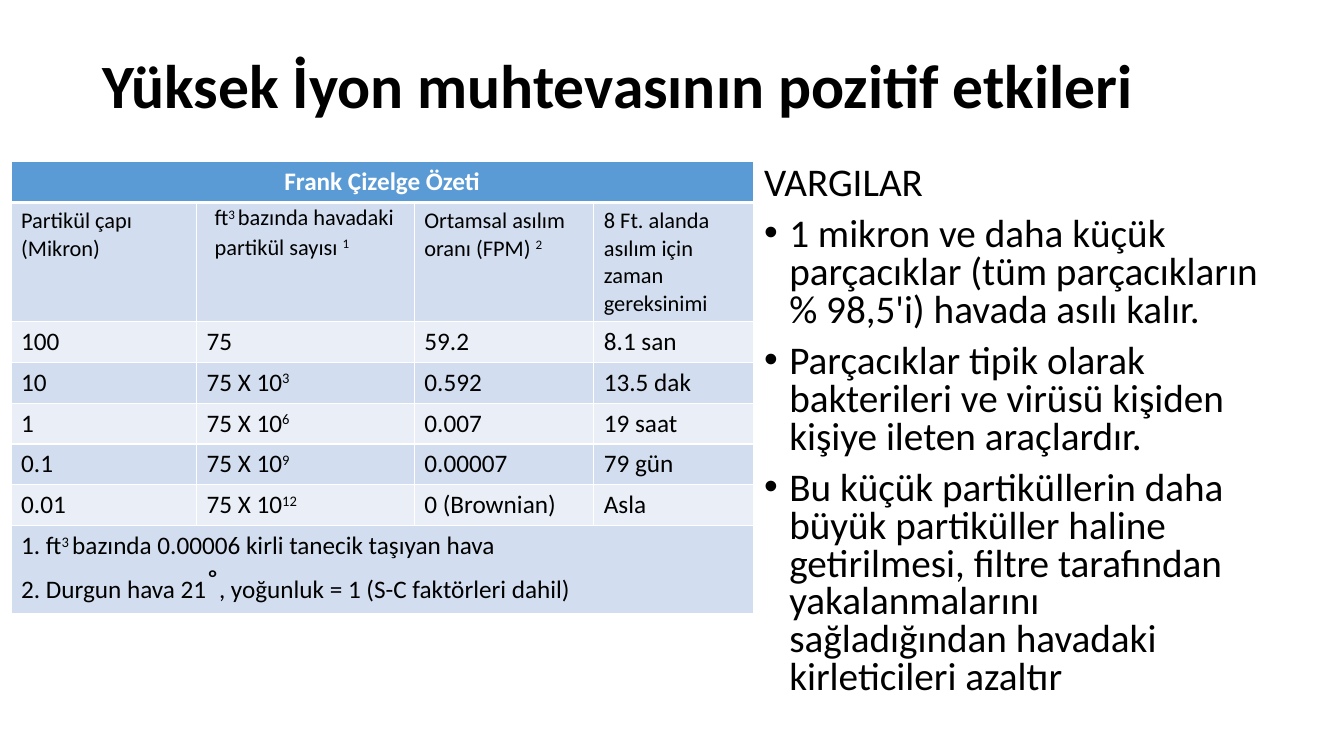
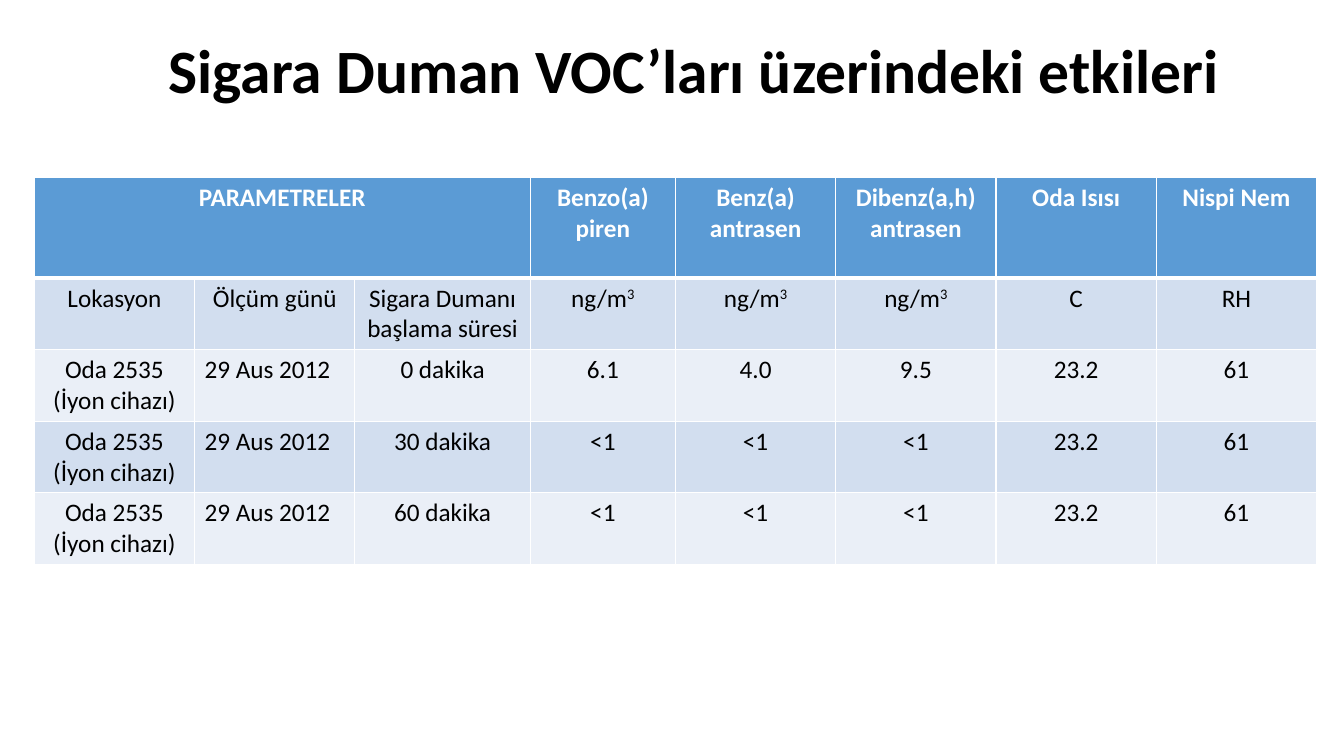
"""Build two slides on air ionisation: particle settling times and smoke compounds."""
from dataclasses import dataclass, replace

from lxml.etree import SubElement
from pptx import Presentation
from pptx.dml.color import RGBColor
from pptx.enum.text import MSO_ANCHOR, PP_ALIGN
from pptx.oxml import parse_xml
from pptx.oxml.ns import nsdecls, qn
from pptx.util import Inches, Pt


@dataclass(frozen=True)
class Theme:
    font: str = "Calibri"
    ink: str = "000000"
    white: str = "FFFFFF"
    header: str = "5B9BD5"
    bands: tuple[str, str] = ("D2DEEF", "EAEFF7")
    title_size: int = 44
    body_size: int = 28
    table_size: int = 18
    label_size: int = 16
    degree_size: int = 28
    line_width: int = 1
    header_line_width: int = 3


@dataclass(frozen=True)
class Span:
    text: str
    size: int
    raised: bool = False


@dataclass(frozen=True)
class Cell:
    paragraphs: tuple[tuple[Span, ...], ...]
    align: PP_ALIGN = PP_ALIGN.LEFT
    indent: float = 0
    line_spacing: float | None = None
    flush: bool = False


@dataclass(frozen=True)
class Grid:
    left: float
    top: float
    columns: tuple[float, ...]
    heights: tuple[float, ...]
    rows: list[list[Cell]]
    merges: tuple[tuple[int, int], ...]


THEME = Theme()
EMPTY = Cell(())


def spans(text: str, size: int = THEME.table_size) -> tuple[Span, ...]:
    """Split text at carets, raising every second piece."""
    pieces = enumerate(text.split("^"))
    return tuple(Span(piece, size, index % 2 == 1) for index, piece in pieces if piece)


def cells(*texts: str, size: int = THEME.table_size, align: PP_ALIGN = PP_ALIGN.LEFT) -> list[Cell]:
    """Make a row of cells, one paragraph for each line of text."""
    return [
        Cell(tuple(spans(line, size) for line in text.split("\n") if line), align)
        for text in texts
    ]


def add_spans(para, content: tuple[Span, ...], color: str, bold: bool = False) -> None:
    """Add each span to a paragraph as a run."""
    for span in content:
        run = para.add_run()
        run.text = span.text
        run.font.name = THEME.font
        run.font.size = Pt(span.size)
        run.font.bold = bold
        run.font.color.rgb = RGBColor.from_string(color)
        if span.raised:
            run.font._element.set("baseline", "30000")


def next_paragraph(frame, index: int):
    """Return the first paragraph of a frame or append another."""
    return frame.add_paragraph() if index else frame.paragraphs[0]


def add_box(page, left: float, top: float, width: float, height: float):
    """Add a wrapping text box and return its frame."""
    frame = page.shapes.add_textbox(
        Inches(left), Inches(top), Inches(width), Inches(height)
    ).text_frame
    frame.word_wrap = True
    return frame


def add_title(page, text: str, left: float, top: float, align: PP_ALIGN) -> None:
    """Add the bold slide title."""
    frame = add_box(page, left, top, 11.5, 1.45)
    frame.vertical_anchor = MSO_ANCHOR.MIDDLE
    para = frame.paragraphs[0]
    para.alignment = align
    para.line_spacing = 0.9
    add_spans(para, spans(text, THEME.title_size), THEME.ink, bold=True)


def add_findings(page, heading: str, findings: tuple[str, ...]) -> None:
    """Add a heading followed by bulleted findings."""
    frame = add_box(page, 7.48, 1.6, 5.12, 5.54)
    for index, text in enumerate((heading, *findings)):
        para = next_paragraph(frame, index)
        para.line_spacing = 0.8
        if index:
            para.space_before = Pt(10)
            properties = para._p.get_or_add_pPr()
            properties.set("marL", str(Inches(0.25)))
            properties.set("indent", str(-Inches(0.25)))
            SubElement(properties, qn("a:buFont"), typeface="Arial")
            SubElement(properties, qn("a:buChar"), char="•")
        add_spans(para, spans(text, THEME.body_size), THEME.ink)


def set_borders(table_cell, row: int) -> None:
    """Draw white cell borders, heavier below the header row."""
    properties = table_cell._tc.get_or_add_tcPr()
    heavy_side = {0: "B", 1: "T"}.get(row)
    for position, side in enumerate("LRTB"):
        width = THEME.header_line_width if side == heavy_side else THEME.line_width
        properties.insert(position, parse_xml(
            f'<a:ln{side} {nsdecls("a")} w="{Pt(width)}"><a:solidFill>'
            f'<a:srgbClr val="{THEME.white}"/></a:solidFill></a:ln{side}>'
        ))


def fill_cell(table_cell, content: Cell, row: int) -> None:
    """Apply fill, borders and text to one table cell."""
    is_header = row == 0
    background = THEME.header if is_header else THEME.bands[(row - 1) % 2]
    table_cell.fill.solid()
    table_cell.fill.fore_color.rgb = RGBColor.from_string(background)
    set_borders(table_cell, row)
    if content.flush:
        table_cell.margin_top = table_cell.margin_bottom = Inches(0)
    for index, paragraph in enumerate(content.paragraphs):
        para = next_paragraph(table_cell.text_frame, index)
        para.alignment = content.align
        if content.line_spacing:
            para.line_spacing = content.line_spacing
        if content.indent:
            para._p.get_or_add_pPr().set("marL", str(Inches(content.indent)))
        add_spans(para, paragraph, THEME.white if is_header else THEME.ink, is_header)


def add_grid(page, grid: Grid) -> None:
    """Add a table with a header row and alternating bands."""
    table = page.shapes.add_table(
        len(grid.rows), len(grid.columns), Inches(grid.left), Inches(grid.top),
        Inches(sum(grid.columns)), Inches(sum(grid.heights)),
    ).table
    table.first_row = table.horz_banding = False
    for column, width in zip(table.columns, grid.columns):
        column.width = Inches(width)
    for row, height in zip(table.rows, grid.heights):
        row.height = Inches(height)
    for row, contents in enumerate(grid.rows):
        padding = [EMPTY] * (len(grid.columns) - len(contents))
        for column, content in enumerate(contents + padding):
            fill_cell(table.cell(row, column), content, row)
    for row, count in grid.merges:
        table.cell(row, 0).merge(table.cell(row, count - 1))


def particle_grid() -> Grid:
    """Describe the particle settling table."""
    labels = cells(
        "Partikül çapı (Mikron)",
        "ft^3 ^bazında havadaki partikül sayısı ^1",
        "Ortamsal asılım oranı (FPM) ^2",
        "8 Ft. alanda asılım için zaman gereksinimi",
        size=THEME.label_size,
    )
    labels[1] = replace(labels[1], indent=0.08, line_spacing=1.07, flush=True)
    notes = Cell((
        spans("1. ft^3 ^bazında 0.00006 kirli tanecik taşıyan hava"),
        (
            *spans("2. Durgun hava 21"),
            Span("˚", THEME.degree_size),
            *spans(", yoğunluk = 1 (S-C faktörleri dahil)"),
        ),
    ))
    measurements = (
        ("100", "75", "59.2", "8.1 san"),
        ("10", "75 X 10^3", "0.592", "13.5 dak"),
        ("1", "75 X 10^6", "0.007", "19 saat"),
        ("0.1", "75 X 10^9", "0.00007", "79 gün"),
        ("0.01", "75 X 10^12", "0 (Brownian)", "Asla"),
    )
    return Grid(
        0.11, 1.6, (1.84, 2.16, 1.78, 1.58),
        (0.41, 1.18, *[0.405] * len(measurements), 0.87),
        [
            cells("Frank Çizelge Özeti", align=PP_ALIGN.CENTER),
            labels,
            *[cells(*values) for values in measurements],
            [notes],
        ],
        ((0, 4), (7, 4)),
    )


def smoke_row(minutes: int, compounds: tuple[str, str, str]) -> list[Cell]:
    """Make one measurement row of the smoke table."""
    row = cells(
        "Oda 2535\n(İyon cihazı)", "29 Aus 2012", f"{minutes} dakika", *compounds,
        "23.2", "61", align=PP_ALIGN.CENTER,
    )
    row[1] = replace(row[1], align=PP_ALIGN.LEFT)
    return row


def smoke_grid() -> Grid:
    """Describe the smoke compound table."""
    below_limit = ("˂1",) * 3
    return Grid(
        0.34, 1.76, (1.59, 1.59, 1.74, 1.44, *[1.59] * 4),
        (1.0, *[0.71] * 4),
        [
            cells(
                "PARAMETRELER", "", "", "Benzo(a) piren", "Benz(a) antrasen",
                "Dibenz(a,h) antrasen", "Oda Isısı", "Nispi Nem", align=PP_ALIGN.CENTER,
            ),
            cells(
                "Lokasyon", "Ölçüm günü", "Sigara Dumanı başlama süresi",
                *["ng/m^3"] * 3, "C", "RH", align=PP_ALIGN.CENTER,
            ),
            smoke_row(0, ("6.1", "4.0", "9.5")),
            smoke_row(30, below_limit),
            smoke_row(60, below_limit),
        ],
        ((0, 3),),
    )


def main() -> None:
    """Build and save the deck."""
    deck = Presentation()
    deck.slide_width, deck.slide_height = Inches(13.33), Inches(7.5)
    blank = deck.slide_layouts[6]

    page = deck.slides.add_slide(blank)
    add_title(page, "Yüksek İyon muhtevasının pozitif etkileri", 0.92, 0.15, PP_ALIGN.LEFT)
    add_findings(page, "VARGILAR", (
        "1 mikron ve daha küçük parçacıklar (tüm parçacıkların % 98,5'i) havada asılı kalır.",
        "Parçacıklar tipik olarak bakterileri ve virüsü kişiden kişiye ileten araçlardır.",
        "Bu küçük partiküllerin daha büyük partiküller haline getirilmesi, filtre tarafından "
        "yakalanmalarını sağladığından havadaki kirleticileri azaltır",
    ))
    add_grid(page, particle_grid())

    page = deck.slides.add_slide(blank)
    add_title(page, "Sigara Duman VOC’ları üzerindeki etkileri", 1.14, 0, PP_ALIGN.CENTER)
    add_grid(page, smoke_grid())

    deck.save("out.pptx")


if __name__ == "__main__":
    main()
